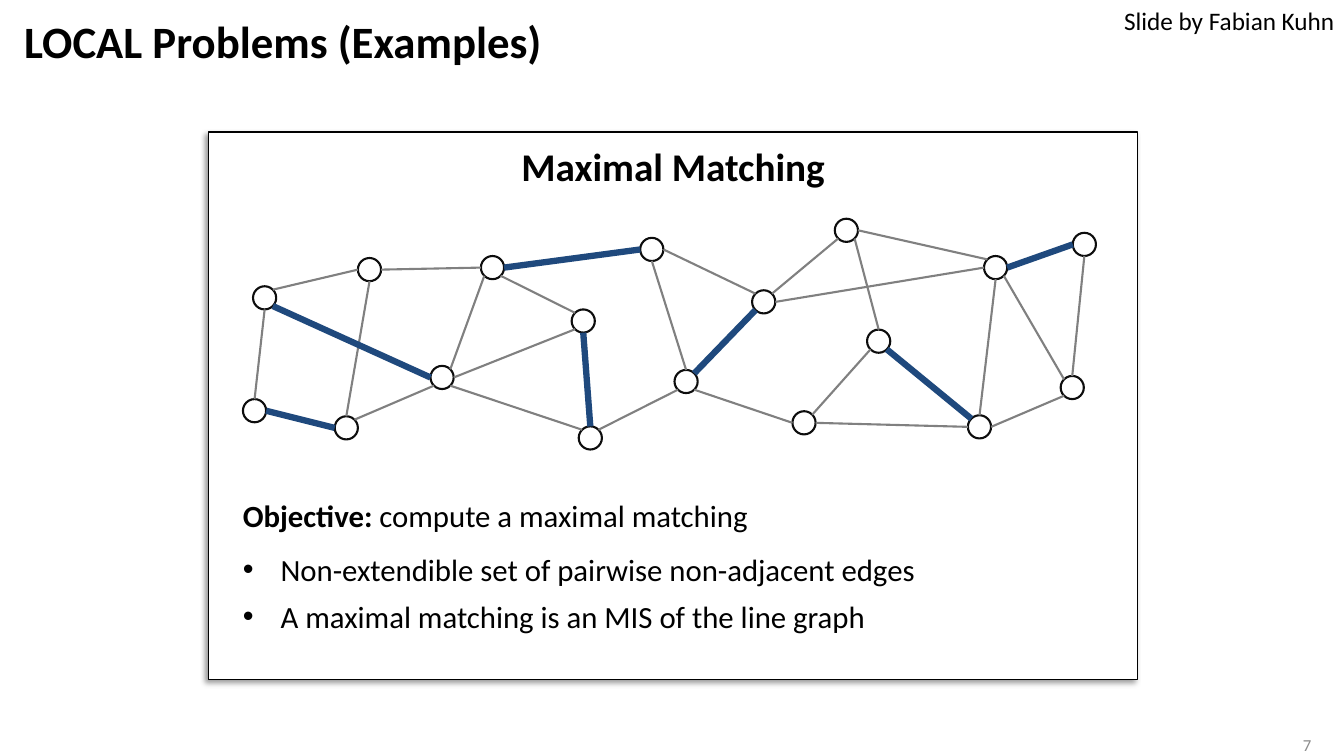
from dataclasses import dataclass

from lxml import etree
from pptx import Presentation
from pptx.dml.color import RGBColor
from pptx.enum import shapes, text
from pptx.oxml import ns
from pptx.util import Inches, Length, Pt

BLACK = RGBColor(0x00, 0x00, 0x00)
WHITE = RGBColor(0xFF, 0xFF, 0xFF)
RIM = RGBColor(0x0D, 0x0D, 0x0D)
GREY = RGBColor(0x80, 0x80, 0x80)
PALE = RGBColor(0x8C, 0x8C, 0x8C)
BLUE = RGBColor(0x1F, 0x49, 0x7D)
FONT = "Calibri"

# The slide is a grid of square cells, ten to the inch
CELL = Inches(0.1)
COLS, ROWS = 133.3, 75
NODE = 2.3
DIAG = 0.5 ** 0.5


def grid(cells: float) -> Length:
    return Length(round(cells * CELL))


@dataclass(frozen=True)
class Area:
    col: float
    row: float
    cols: float
    rows: float

    def span(self) -> list[Length]:
        return [grid(v) for v in (self.col, self.row, self.cols, self.rows)]


@dataclass(frozen=True)
class Node:
    col: float
    row: float

    def rim(self, side: str) -> tuple[Length, Length]:
        """Point on the circle in a compass direction."""
        reach = NODE / 2 * (DIAG if len(side) == 2 else 1)
        x = ("E" in side) - ("W" in side)
        y = ("S" in side) - ("N" in side)
        mid = NODE / 2
        return grid(self.col + mid + x * reach), grid(self.row + mid + y * reach)


@dataclass(frozen=True)
class Kind:
    colour: RGBColor
    width: float
    edges: str


# Graph: top left cell of each node, and edges as node:side-node:side
NODES = {
    "a": Node(25.1, 28.4), "b": Node(24.1, 39.6), "c": Node(35.5, 25.6),
    "d": Node(33.2, 41.3), "e": Node(42.7, 36.3), "f": Node(47.7, 25.4),
    "g": Node(56.7, 30.7), "h": Node(57.4, 42.3), "i": Node(63.5, 23.6),
    "j": Node(66.9, 36.7), "k": Node(74.6, 28.8), "l": Node(78.6, 40.8),
    "m": Node(82.8, 21.7), "n": Node(86, 32.7), "o": Node(96, 41.2),
    "p": Node(97.6, 25.4), "q": Node(105.2, 37.3), "r": Node(106.4, 23.1),
}
KINDS = [
    Kind(GREY, 1.5,
         "j:N-i:S d:NE-e:SW e:SE-h:NW g:NW-f:SE f:W-c:E f:SW-e:NE "
         "g:SW-e:E h:NE-j:SW j:SE-l:W l:NE-n:SW o:W-l:E n:N-m:SE "
         "k:NW-i:E k:NE-m:SW k:E-p:W o:N-p:S m:E-p:NW c:W-a:NE "
         "b:N-a:S d:N-c:S o:E-q:SW q:NW-p:SE q:N-r:S"),
    Kind(BLUE, 4.5,
         "h:N-g:S j:NE-k:SW o:NW-n:SE f:E-i:W a:SE-e:W b:E-d:W p:E-r:W"),
]


def style(para, size: float, bold: bool = False, colour: RGBColor = BLACK) -> None:
    for run in para.runs:
        font = run.font
        font.name, font.size, font.bold = FONT, Pt(size), bold
        font.color.rgb = colour


def label(slide, area: Area, words: str, size: float, bold: bool = False,
          colour: RGBColor = BLACK, wrap: bool = True):
    frame = slide.shapes.add_textbox(*area.span()).text_frame
    frame.word_wrap = wrap
    if not wrap:
        frame.auto_size = text.MSO_AUTO_SIZE.SHAPE_TO_FIT_TEXT
    frame.text = words
    for para in frame.paragraphs:
        style(para, size, bold, colour)
    return frame


def solid(group, form, area: Area, rim: RGBColor, width: float):
    shape = group.add_shape(form, *area.span())
    shape.shadow.inherit = False
    shape.fill.solid()
    shape.fill.fore_color.rgb = WHITE
    shape.line.color.rgb = rim
    shape.line.width = Pt(width)
    return shape


def shade(shape) -> None:
    """Soft shadow towards the lower left."""
    effects = shape._element.spPr.find(ns.qn("a:effectLst"))
    cast = etree.SubElement(effects, ns.qn("a:outerShdw"), blurRad=str(Pt(4)),
                            dist=str(Pt(3)), dir=str(135 * 60000),
                            algn="tr", rotWithShape="0")
    tone = etree.SubElement(cast, ns.qn("a:srgbClr"), val=str(BLACK))
    etree.SubElement(tone, ns.qn("a:alpha"), val="40000")


def bullet(para, indent: Length) -> None:
    props = para._p.get_or_add_pPr()
    props.set("marL", str(indent))
    props.set("indent", str(-indent))
    etree.SubElement(props, ns.qn("a:buFont"), typeface="Arial")
    etree.SubElement(props, ns.qn("a:buChar"), char="•")


def link(group, edge: str, kind: Kind) -> None:
    ends = []
    for end in edge.split("-"):
        name, side = end.split(":")
        ends.extend(NODES[name].rim(side))
    line = group.add_connector(shapes.MSO_CONNECTOR.STRAIGHT, *ends)
    line.line.color.rgb = kind.colour
    line.line.width = Pt(kind.width)
    etree.SubElement(line._element.spPr, ns.qn("a:effectLst"))


def panel(slide) -> None:
    box = solid(slide.shapes, shapes.MSO_SHAPE.RECTANGLE,
                Area(20.7, 13.1, 92.1, 54.3), BLACK, 1)
    shade(box)
    frame = box.text_frame
    frame.margin_left = frame.margin_right = CELL
    frame.margin_top = frame.margin_bottom = CELL
    frame.vertical_anchor = text.MSO_ANCHOR.TOP
    frame.text = "Maximal Matching"
    head = frame.paragraphs[0]
    head.alignment = text.PP_ALIGN.CENTER
    style(head, 28, True)


def goal(slide) -> None:
    frame = label(slide, Area(23.1, 48.8, 69.4, 14.8), "Objective: ", 22, True, wrap=False)
    first = frame.paragraphs[0]
    first.add_run().text = "compute a maximal matching"
    style(first, 22)
    first.runs[0].font.bold = True
    points = [("Non-extendible set of pairwise non-adjacent edges", 12),
              ("A maximal matching is an MIS of the line graph", 7)]
    for words, gap in points:
        para = frame.add_paragraph()
        para.text = words
        para.space_before = Pt(gap)
        bullet(para, grid(3.75))
        style(para, 22)


def graph(slide) -> None:
    group = slide.shapes.add_group_shape().shapes
    for node in NODES.values():
        solid(group, shapes.MSO_SHAPE.OVAL, Area(node.col, node.row, NODE, NODE), RIM, 1.5)
    for kind in KINDS:
        for edge in kind.edges.split():
            link(group, edge, kind)


def main() -> None:
    deck = Presentation()
    deck.slide_width, deck.slide_height = grid(COLS), grid(ROWS)
    slide = deck.slides.add_slide(deck.slide_layouts[6])

    # Page number
    page = label(slide, Area(126, 72.7, 7.3, 2.3), "7", 12, colour=PALE)
    page.vertical_anchor = text.MSO_ANCHOR.MIDDLE
    page.paragraphs[0].alignment = text.PP_ALIGN.CENTER

    # Framed example
    panel(slide)
    goal(slide)
    graph(slide)

    # Title and author
    title = label(slide, Area(1.4, 0.6, 120.7, 7.6), "LOCAL Problems (Examples)", 32, True)
    title.vertical_anchor = text.MSO_ANCHOR.MIDDLE
    title.paragraphs[0].line_spacing = 0.9
    label(slide, Area(110.5, 0, 23.1, 4), "Slide by Fabian Kuhn", 18, wrap=False)

    deck.save("out.pptx")


if __name__ == "__main__":
    main()
